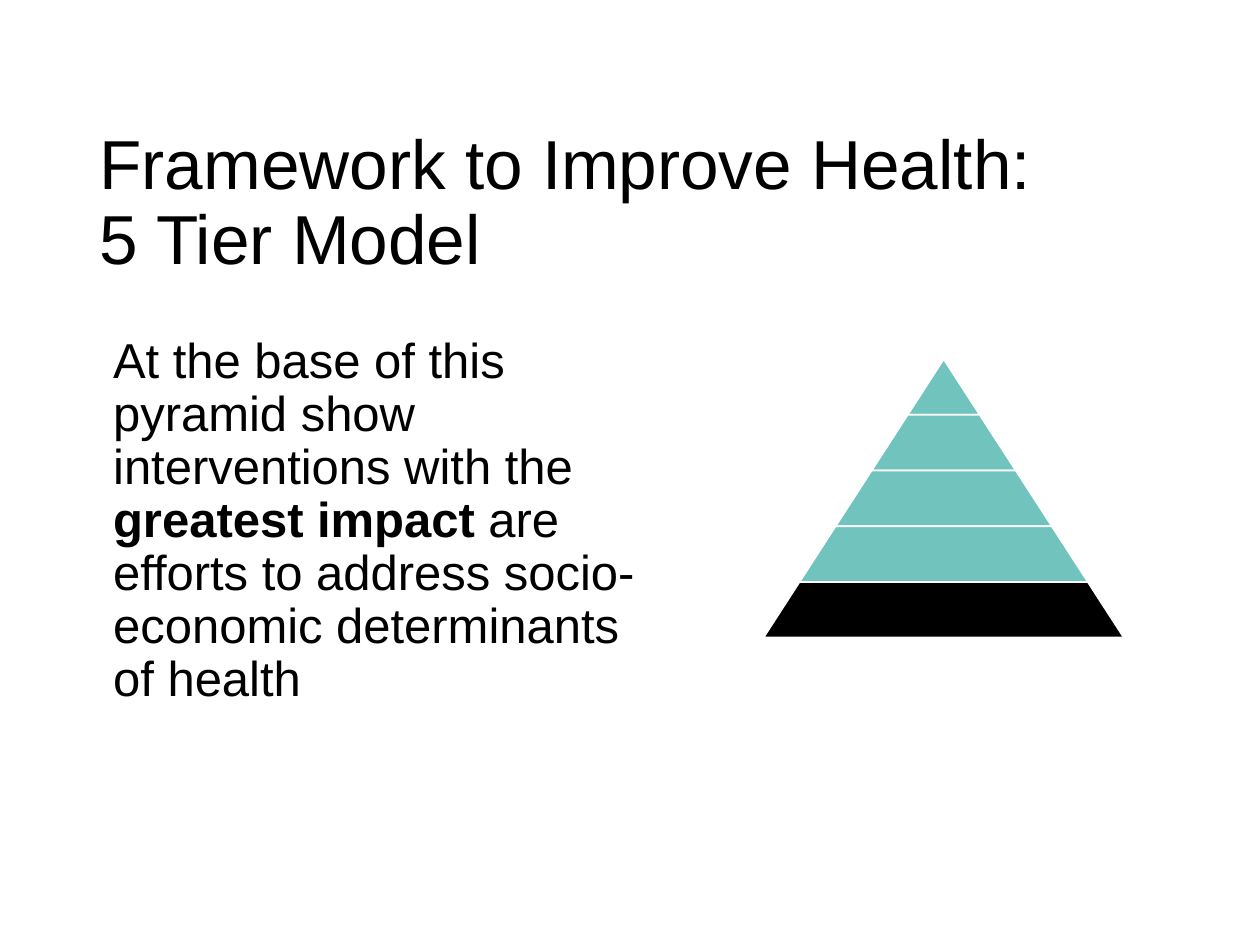
from pptx import Presentation
from pptx.dml.color import RGBColor
from pptx.enum.shapes import MSO_SHAPE
from pptx.enum.text import MSO_ANCHOR, MSO_AUTO_SIZE, PP_ALIGN
from pptx.util import Inches, Pt

TEAL, BLACK, WHITE = "70C4BD", "000000", "FFFFFF"
TIER_COLORS = [TEAL] * 4 + [BLACK]


def color(value):
    return RGBColor.from_string(value)


def format_paragraph(para, size):
    para.alignment = PP_ALIGN.LEFT
    para.line_spacing = 0.9
    para.space_before = Pt(0)
    para.font.name = "Arial"
    para.font.size = Pt(size)
    para.font.color.rgb = color(BLACK)


def place_title(page, left, top, width, height):
    title = page.shapes.title
    title.left, title.top = Inches(left), Inches(top)
    title.width, title.height = Inches(width), Inches(height)
    frame = title.text_frame
    frame.text = "Framework to Improve Health: \v5 Tier Model"
    frame.word_wrap = True
    frame.auto_size = MSO_AUTO_SIZE.NONE
    frame.vertical_anchor = MSO_ANCHOR.MIDDLE
    format_paragraph(frame.paragraphs[0], 39.6)


def add_message(page, left, top, width, height):
    box = page.shapes.add_textbox(Inches(left), Inches(top), Inches(width), Inches(height))
    box.text_frame.word_wrap = True
    para = box.text_frame.paragraphs[0]
    format_paragraph(para, 28)
    for text, bold in (
        ("At the base of this pyramid show interventions with the ", False),
        ("greatest impact ", True),
        ("are efforts to address socio-economic determinants of health", False),
    ):
        span = para.add_run()
        span.text = text
        span.font.bold = bold


def add_pyramid(page, left, top, width, height):
    """Stack equal-height tiers, each wider than the one above by the same step."""
    count = len(TIER_COLORS)
    tier_height = height / count
    slope = width / 2 / height
    group = page.shapes.add_group_shape()
    for index, fill in enumerate(TIER_COLORS):
        tier_width = width * (index + 1) / count
        tier = group.shapes.add_shape(
            MSO_SHAPE.TRAPEZOID,
            Inches(left + (width - tier_width) / 2),
            Inches(top + index * tier_height),
            Inches(tier_width),
            Inches(tier_height),
        )
        tier.adjustments[0] = slope
        tier.shadow.inherit = False
        tier.fill.solid()
        tier.fill.fore_color.rgb = color(fill)
        tier.line.color.rgb = color(WHITE)
        tier.line.width = Pt(1)


def main():
    deck = Presentation()
    deck.slide_width, deck.slide_height = Inches(10), Inches(7.5)
    page = deck.slides.add_slide(deck.slide_layouts[5])
    place_title(page, 0.69, 1.22, 8.62, 0.8)
    add_message(page, 0.8, 2.62, 4.36, 4.88)
    add_pyramid(page, 6.06, 2.85, 2.86, 2.21)
    deck.save("out.pptx")


if __name__ == "__main__":
    main()
